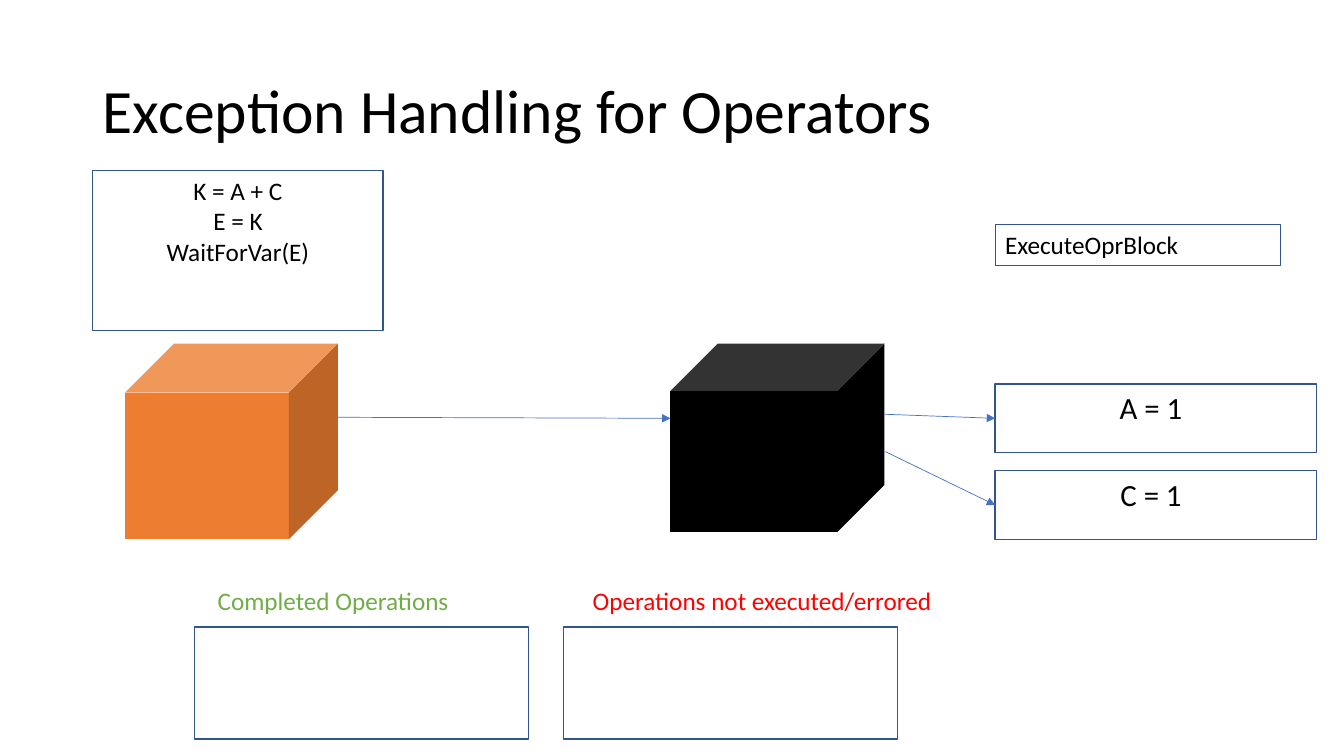
"""Build the slide on exception handling for operators."""
import pptx
import pptx.dml.color
import pptx.enum.shapes
import pptx.enum.text
import pptx.oxml
import pptx.oxml.ns
import pptx.util

RGBColor = pptx.dml.color.RGBColor
SHAPES = pptx.enum.shapes.MSO_SHAPE
ALIGN = pptx.enum.text.PP_ALIGN
ANCHOR = pptx.enum.text.MSO_ANCHOR
AUTO_SIZE = pptx.enum.text.MSO_AUTO_SIZE

PX = 9144
BLACK = RGBColor(0x00, 0x00, 0x00)
WHITE = RGBColor(0xFF, 0xFF, 0xFF)
ORANGE = RGBColor(0xED, 0x7D, 0x31)
GREEN = RGBColor(0x70, 0xAD, 0x47)
RED = RGBColor(0xFF, 0x00, 0x00)
BORDER = RGBColor(0x32, 0x54, 0x91)
ARROW = RGBColor(0x44, 0x72, 0xC4)


def emu(*lengths):
    """Turn px lengths into EMU."""
    return [length * PX for length in lengths]


def apply(target, values):
    """Set each attribute in values on target."""
    for name, value in values.items():
        setattr(target, name, value)


def write(frame, lines, size, color=BLACK, align=ALIGN.LEFT, spacing=1.0, **frame_format):
    """Write lines as paragraphs of one text format."""
    apply(frame, {"word_wrap": True, "auto_size": AUTO_SIZE.NONE,
                  "vertical_anchor": ANCHOR.TOP, **frame_format})
    frame.text = "\n".join(lines)
    for paragraph in frame.paragraphs:
        apply(paragraph, {"alignment": align, "line_spacing": spacing})
        for run in paragraph.runs:
            apply(run.font, {"name": "Calibri", "size": pptx.util.Pt(size)})
            run.font.color.rgb = color


def add_cube(slide, box, color):
    """Add a borderless cube."""
    cube = slide.shapes.add_shape(SHAPES.CUBE, *emu(*box))
    cube.shadow.inherit = False
    cube.fill.solid()
    cube.fill.fore_color.rgb = color
    cube.line.fill.background()


def add_panel(slide, box, lines=(), size=18, fill=WHITE, border=1, **text_format):
    """Add an outlined rectangle with optional text."""
    panel = slide.shapes.add_shape(SHAPES.RECTANGLE, *emu(*box))
    panel.shadow.inherit = False
    if fill is None:
        panel.fill.background()
    else:
        panel.fill.solid()
        panel.fill.fore_color.rgb = fill
    panel.line.color.rgb = BORDER
    panel.line.width = pptx.util.Pt(border)
    if lines:
        write(panel.text_frame, lines, size, **text_format)
    return panel


def add_caption(slide, box, text, color):
    """Add a one-line coloured caption."""
    caption = slide.shapes.add_textbox(*emu(*box))
    write(caption.text_frame, [text], 18, color, auto_size=AUTO_SIZE.SHAPE_TO_FIT_TEXT)


def add_arrow(slide, start, end, target=None):
    """Add a thin arrow, joined to the left side of target if given."""
    arrow = slide.shapes.add_connector(
        pptx.enum.shapes.MSO_CONNECTOR.STRAIGHT, *emu(*start, *end))
    if target is not None:
        arrow.end_connect(target, 1)
    arrow.line.color.rgb = ARROW
    arrow.line.width = pptx.util.Pt(0.5)
    head = pptx.oxml.parse_xml(
        f'<a:tailEnd {pptx.oxml.ns.nsdecls("a")} type="triangle"/>')
    arrow.line._get_or_add_ln().append(head)
    arrow._element.spPr.append(
        pptx.oxml.parse_xml(f'<a:effectLst {pptx.oxml.ns.nsdecls("a")}/>'))


def main():
    """Lay out the slide and save it."""
    deck = pptx.Presentation()
    deck.slide_width, deck.slide_height = emu(1333, 750)
    slide = deck.slides.add_slide(deck.slide_layouts[5])

    title = slide.shapes.title
    apply(title, dict(zip(("left", "top", "width", "height"), emu(92, 40, 1150, 145))))
    write(title.text_frame, ["Exception Handling for Operators"], 44,
          spacing=0.9, vertical_anchor=ANCHOR.MIDDLE)

    add_cube(slide, (665, 341, 212, 187), BLACK)
    add_cube(slide, (124, 341, 211, 194), ORANGE)
    add_arrow(slide, (335, 414), (665, 415))
    add_panel(slide, (92, 169, 288, 159), ["K = A + C", "E = K", "WaitForVar(E)"],
              align=ALIGN.CENTER)

    for left in (193, 559):
        add_panel(slide, (left, 622, 331, 111))
    add_caption(slide, (206, 576, 295, 40), "Completed Operations", GREEN)
    add_caption(slide, (578, 576, 391, 40), "Operations not executed/errored", RED)

    add_panel(slide, (987, 223, 283, 40), ["ExecuteOprBlock"], fill=None, border=0.75,
              auto_size=AUTO_SIZE.SHAPE_TO_FIT_TEXT)
    for text, top, arrow_top in (("A = 1", 381, 411), ("C = 1", 467, 448)):
        assignment = add_panel(slide, (987, top, 319, 68), [text], 22,
                               align=ALIGN.CENTER, margin_left=0)
        add_arrow(slide, (878, arrow_top), (987, top + 34), assignment)

    deck.save("out.pptx")


if __name__ == "__main__":
    main()
